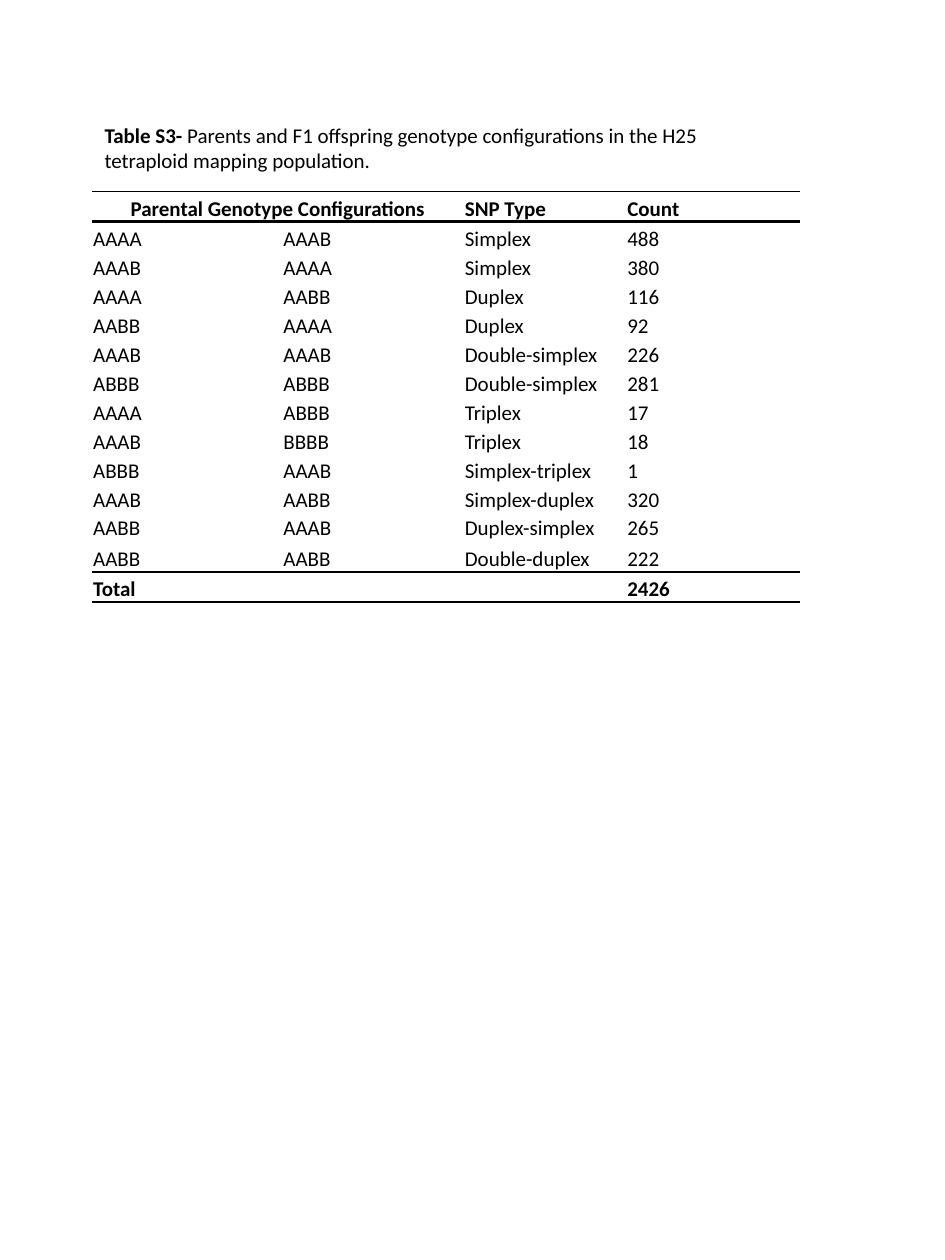
from dataclasses import dataclass

from lxml.etree import SubElement
from pptx import Presentation
from pptx.dml.color import RGBColor
from pptx.enum.text import MSO_ANCHOR as Anchor, MSO_AUTO_SIZE as AutoSize, PP_ALIGN as Align
from pptx.oxml.ns import qn
from pptx.util import Inches, Pt


@dataclass(frozen=True)
class Theme:
    font: str = "Calibri"
    size: int = 12
    ink: str = "000000"
    thin: float = 0.5
    medium: float = 1
    thick: float = 2


@dataclass(frozen=True)
class Row:
    cells: tuple
    bold: bool = False
    top: float = 0
    bottom: float = 0
    height: float = 0.23


THEME = Theme()
COL_WIDTHS = (1.51, 1.44, 1.29, 1.38)
GENOTYPES = (
    ("AAAA", "AAAB", "Simplex", "488"),
    ("AAAB", "AAAA", "Simplex", "380"),
    ("AAAA", "AABB", "Duplex", "116"),
    ("AABB", "AAAA", "Duplex", "92"),
    ("AAAB", "AAAB", "Double-simplex", "226"),
    ("ABBB", "ABBB", "Double-simplex", "281"),
    ("AAAA", "ABBB", "Triplex", "17"),
    ("AAAB", "BBBB", "Triplex", "18"),
    ("ABBB", "AAAB", "Simplex-triplex", "1"),
    ("AAAB", "AABB", "Simplex-duplex", "320"),
    ("AABB", "AAAB", "Duplex-simplex", "265"),
    ("AABB", "AABB", "Double-duplex", "222"),
)
ROWS = (
    Row(("Parental Genotype Configurations", "", "SNP Type", "Count"),
        True, THEME.thin, THEME.thick, 0.24),
    Row(GENOTYPES[0], top=THEME.thick, height=0.24),
    *(Row(cells) for cells in GENOTYPES[1:-1]),
    Row(GENOTYPES[-1], bottom=THEME.medium, height=0.24),
    Row(("Total", "", "", "2426"), True, THEME.medium, THEME.medium, 0.24),
)


def add_text(p, text: str, bold: bool) -> None:
    r = p.add_run()
    r.text = text
    r.font.name = THEME.font
    r.font.size = Pt(THEME.size)
    r.font.bold = bold
    r.font.color.rgb = RGBColor.from_string(THEME.ink)


def set_borders(cell, top: float, bottom: float) -> None:
    """Rule the cell above and below; a width of 0 means no line."""
    tc_pr = cell._tc.get_or_add_tcPr()
    for side, width in (("L", 0), ("R", 0), ("T", top), ("B", bottom)):
        ln = SubElement(tc_pr, qn(f"a:ln{side}"), w=str(Pt(width)))
        if width:
            fill = SubElement(ln, qn("a:solidFill"))
            SubElement(fill, qn("a:srgbClr"), val=THEME.ink)
        else:
            SubElement(ln, qn("a:noFill"))


def fill_cell(cell, text: str, row: Row) -> None:
    set_borders(cell, row.top, row.bottom)
    cell.fill.background()
    cell.vertical_anchor = Anchor.BOTTOM
    cell.margin_left = cell.margin_right = cell.margin_top = Inches(0.01)
    cell.margin_bottom = 0
    p = cell.text_frame.paragraphs[0]
    if text:
        add_text(p, text, row.bold)
    else:  # keeps an empty cell from stretching its row
        SubElement(p._p, qn("a:endParaRPr"), sz=str(THEME.size * 100))


def add_caption(slide) -> None:
    sp = slide.shapes.title
    sp.left, sp.top, sp.width, sp.height = map(Inches, (0.73, 0.92, 5.41, 0.5))
    tf = sp.text_frame
    tf.word_wrap = True
    tf.auto_size = AutoSize.SHAPE_TO_FIT_TEXT
    tf.vertical_anchor = Anchor.TOP
    p = tf.paragraphs[0]
    p.alignment = Align.LEFT
    add_text(p, "Table S3- ", True)
    add_text(p, "Parents and F1 offspring genotype configurations in the H25 "
                "tetraploid mapping population.", False)


def add_genotype_table(slide) -> None:
    height = sum(row.height for row in ROWS)
    table = slide.shapes.add_table(
        len(ROWS), len(COL_WIDTHS), Inches(0.73), Inches(1.52),
        Inches(sum(COL_WIDTHS)), Inches(height)).table
    table.first_row = table.horz_banding = False
    for column, width in zip(table.columns, COL_WIDTHS):
        column.width = Inches(width)
    for i, row in enumerate(ROWS):
        table.rows[i].height = Inches(row.height)
        for j, text in enumerate(row.cells):
            fill_cell(table.cell(i, j), text, row)
    heading = table.cell(0, 0)
    heading.merge(table.cell(0, 1))
    heading.text_frame.paragraphs[0].alignment = Align.CENTER


def main() -> None:
    prs = Presentation()
    prs.slide_width, prs.slide_height = Inches(7.5), Inches(10)
    slide = prs.slides.add_slide(prs.slide_layouts.get_by_name("Title Only"))
    add_caption(slide)
    add_genotype_table(slide)
    prs.save("out.pptx")


if __name__ == "__main__":
    main()
